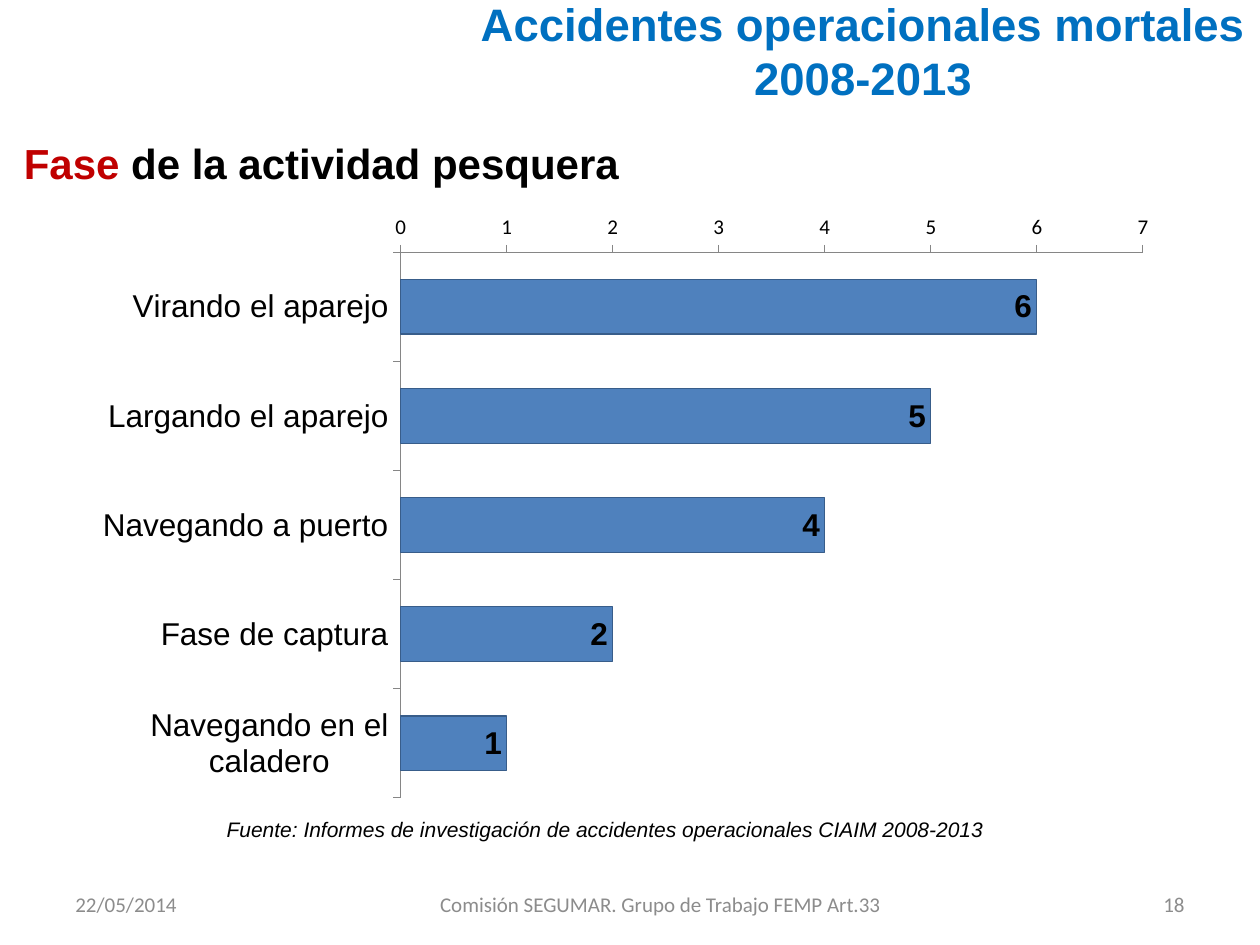
from pptx import Presentation
from pptx import util as u
from pptx.chart.data import CategoryChartData
from pptx.dml.color import RGBColor
from pptx.enum import chart as ch, text as t
from pptx.oxml import parse_xml
from pptx.oxml.ns import nsdecls

BLACK = RGBColor(0, 0, 0)
RED = RGBColor(0xC0, 0, 0)
BLUE = RGBColor(0, 0x70, 0xC0)
GRAY = RGBColor(0x8C, 0x8C, 0x8C)
RULE = RGBColor(0x86, 0x86, 0x86)
BAR = RGBColor(0x4F, 0x81, 0xBD)
EDGE = RGBColor(0x38, 0x5D, 0x8A)

LEFT, MID, RIGHT = t.PP_ALIGN.LEFT, t.PP_ALIGN.CENTER, t.PP_ALIGN.RIGHT

TITLE = ["Accidentes operacionales mortales", "2008-2013"]
HEAD = [("Fase", RED), (" de la actividad pesquera", BLACK)]
SOURCE = "Fuente: Informes de investigación de accidentes operacionales CIAIM 2008-2013"
PHASES = [
    ("Virando el aparejo", 6),
    ("Largando el aparejo", 5),
    ("Navegando a puerto", 4),
    ("Fase de captura", 2),
    ("Navegando en el caladero", 1),
]
FOOT = [
    ("22/05/2014", 1.27, 5.92, LEFT),
    ("Comisión SEGUMAR. Grupo de Trabajo FEMP Art.33", 8.31, 10.01, MID),
    ("18", 20.9, 3.23, RIGHT),
]
PLOT = {"x": 0.29, "y": 0.08, "w": 0.68, "h": 0.9}


def style(font, size, color, name="Arial", bold=False, italic=False):
    font.size = u.Pt(size)
    font.name = name
    font.bold = bold
    font.italic = italic
    font.color.rgb = color


def add_box(slide, x, y, w, h, anchor=t.MSO_ANCHOR.TOP):
    frame = slide.shapes.add_textbox(u.Cm(x), u.Cm(y), u.Cm(w), u.Cm(h)).text_frame
    frame.word_wrap = True
    frame.vertical_anchor = anchor
    return frame


def add_title(slide):
    shape = slide.shapes.title
    shape.left, shape.top = u.Cm(9.3), u.Cm(-0.28)
    shape.width, shape.height = u.Cm(16.2), u.Cm(2.59)
    frame = shape.text_frame
    frame.text = "\n".join(TITLE)
    frame.auto_size = t.MSO_AUTO_SIZE.NONE
    frame.vertical_anchor = t.MSO_ANCHOR.MIDDLE
    for para in frame.paragraphs:
        para.alignment = MID
        para.space_before = u.Pt(0)
        style(para.font, 26, BLUE, bold=True)


def add_text(slide):
    para = add_box(slide, 0.23, 2.64, 24.08, 1.27).paragraphs[0]
    for words, color in HEAD:
        run = para.add_run()
        run.text = words
        style(run.font, 24, color, bold=True)

    para = add_box(slide, 4.32, 16.33, 16.76, 0.76).paragraphs[0]
    para.text = SOURCE
    style(para.font, 12, BLACK, italic=True)

    for words, x, w, align in FOOT:
        para = add_box(slide, x, 17.73, w, 1.01, t.MSO_ANCHOR.MIDDLE).paragraphs[0]
        para.text = words
        para.alignment = align
        style(para.font, 12, GRAY, "Calibri")


def add_bars(slide):
    data = CategoryChartData(number_format="0")
    data.categories = [name for name, count in PHASES]
    data.add_series("Series 1", [count for name, count in PHASES])
    chart = slide.shapes.add_chart(
        ch.XL_CHART_TYPE.BAR_STACKED,
        u.Cm(1.7), u.Cm(4.11), u.Cm(22), u.Cm(12.22), data).chart
    chart.has_legend = False
    chart.has_title = False
    style(chart.font, 10, BLACK, "Calibri")

    cats, vals = chart.category_axis, chart.value_axis
    for axis, size, name in ((cats, 18, "Arial"), (vals, 12, "Calibri")):
        axis.has_major_gridlines = False
        axis.major_tick_mark = ch.XL_TICK_MARK.OUTSIDE
        axis.minor_tick_mark = ch.XL_TICK_MARK.NONE
        axis.format.line.color.rgb = RULE
        style(axis.tick_labels.font, size, BLACK, name)
    cats.reverse_order = True
    vals.minimum_scale, vals.maximum_scale, vals.major_unit = 0, 7, 1

    plot = chart.plots[0]
    plot.gap_width, plot.overlap = 100, 100
    plot.vary_by_categories = False
    bars = plot.series[0]
    bars.format.fill.solid()
    bars.format.fill.fore_color.rgb = BAR
    bars.format.line.color.rgb = EDGE
    bars.format.line.width = u.Pt(0.75)
    labels = bars.data_labels
    labels.show_value = True
    labels.position = ch.XL_LABEL_POSITION.INSIDE_END
    style(labels.font, 18, BLACK, bold=True)

    area = chart._chartSpace.chart.plotArea
    for old in area.findall("{*}layout"):
        area.remove(old)
    modes = '<c:xMode val="edge"/><c:yMode val="edge"/>'
    sides = "".join(f'<c:{key} val="{val}"/>' for key, val in PLOT.items())
    area.insert(0, parse_xml(
        f'<c:layout {nsdecls("c")}><c:manualLayout><c:layoutTarget val="inner"/>'
        f'{modes}{sides}</c:manualLayout></c:layout>'))


def main():
    deck = Presentation()
    deck.slide_width, deck.slide_height = u.Cm(25.4), u.Cm(19.05)
    slide = deck.slides.add_slide(deck.slide_layouts[5])
    add_title(slide)
    add_text(slide)
    add_bars(slide)
    deck.save("out.pptx")


if __name__ == "__main__":
    main()
